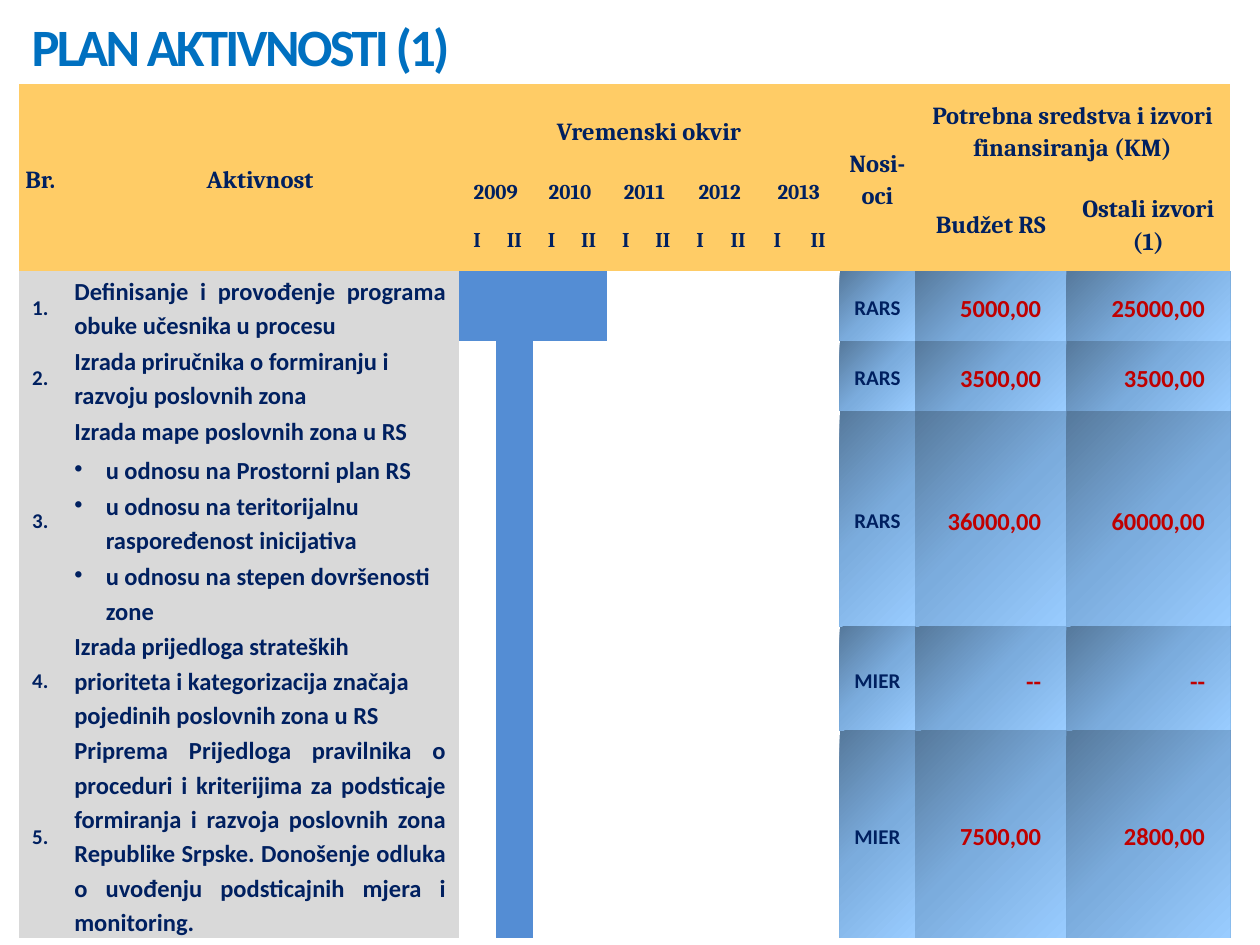
import dataclasses

import lxml.etree
import pptx
import pptx.dml.color
import pptx.enum.text
import pptx.oxml
import pptx.oxml.ns
import pptx.util

ALIGN = pptx.enum.text.PP_ALIGN
ANCHOR = pptx.enum.text.MSO_ANCHOR
NO_GRID = "{2D5ABB26-0587-4C30-8999-92F81FD0307C}"


@dataclasses.dataclass(frozen=True)
class Theme:
    body: str = "Calibri"
    head: str = "Cambria"
    title: str = "0070C0"
    ink: str = "002060"
    money: str = "C00000"
    header: str = "FFCC66"
    label: str = "D9D9D9"
    busy: str = "548DD4"
    idle: str = "FFFFFF"
    gradient: tuple = ((0, "56799C"), (50, "7BACDD"), (100, "99CCFF"))
    title_size: int = 30
    large: int = 14
    small: int = 12


THEME = Theme()


def write(p, text, size=THEME.large, font=THEME.body, color=THEME.ink,
          align=ALIGN.LEFT, leading=1.15, after=0, spacing=None, bullet=False):
    if bullet:
        pPr = p._p.get_or_add_pPr()
        pPr.set("marL", str(pptx.util.Inches(0.25)))
        pPr.set("indent", str(pptx.util.Inches(-0.25)))
        bu = lxml.etree.SubElement(pPr, pptx.oxml.ns.qn("a:buChar"))
        bu.set("char", "•")
        tabs = lxml.etree.SubElement(pPr, pptx.oxml.ns.qn("a:tabLst"))
        tab = lxml.etree.SubElement(tabs, pptx.oxml.ns.qn("a:tab"))
        tab.set("pos", str(pptx.util.Inches(0.5)))
        tab.set("algn", "l")
    p.alignment = align
    p.line_spacing = leading
    p.space_before = pptx.util.Pt(0)
    p.space_after = pptx.util.Pt(after)
    r = p.add_run()
    r.text = text
    r.font.name = font
    r.font.size = pptx.util.Pt(size)
    r.font.bold = True
    r.font.color.rgb = pptx.dml.color.RGBColor.from_string(color)
    if spacing is not None:
        r._r.get_or_add_rPr().set("spc", str(int(spacing * 100)))


class Deck:
    columns, rows = 100, 75

    def __init__(self, theme):
        self.theme = theme
        self.prs = pptx.Presentation()
        self.prs.slide_width = pptx.util.Inches(10)
        self.prs.slide_height = pptx.util.Inches(7.5)
        self.s = self.prs.slides.add_slide(self.prs.slide_layouts[5])

    def x(self, columns):
        return round(self.prs.slide_width * columns / self.columns)

    def y(self, rows):
        return round(self.prs.slide_height * rows / self.rows)

    def title(self, text, left, top, width, height):
        sp = self.s.shapes.title
        sp.left, sp.top = self.x(left), self.y(top)
        sp.width, sp.height = self.x(width), self.y(height)
        tf = sp.text_frame
        tf.margin_left = tf.margin_right = tf.margin_top = tf.margin_bottom = 0
        tf.vertical_anchor = ANCHOR.TOP
        tf.word_wrap = True
        write(tf.paragraphs[0], text, size=self.theme.title_size,
              color=self.theme.title, leading=0.9, spacing=-1.5)

    def table(self, left, top, widths, heights):
        frame = self.s.shapes.add_table(
            len(heights), len(widths), self.x(left), self.y(top),
            self.x(sum(widths)), self.y(sum(heights)))
        self.tbl = frame.table
        self.tbl.first_row = self.tbl.horz_banding = False
        tblPr = self.tbl._tbl.tblPr
        tblPr.find(pptx.oxml.ns.qn("a:tableStyleId")).text = NO_GRID
        for column, width in zip(self.tbl.columns, widths):
            column.width = self.x(width)
        for row, height in zip(self.tbl.rows, heights):
            row.height = self.y(height)
        for cell in self.tbl.iter_cells():
            cell.margin_left = cell.margin_right = self.x(0.4)
            cell.margin_top, cell.margin_bottom = self.y(0.1), 0
            cell.vertical_anchor = ANCHOR.MIDDLE

    def fill(self, cell, color):
        if isinstance(color, str):
            cell.fill.solid()
            cell.fill.fore_color.rgb = pptx.dml.color.RGBColor.from_string(color)
            return
        stops = "".join(f'<a:gs pos="{at * 1000}"><a:srgbClr val="{c}"/></a:gs>'
                        for at, c in color)
        cell._tc.get_or_add_tcPr().append(pptx.oxml.parse_xml(
            f'<a:gradFill {pptx.oxml.ns.nsdecls("a")} rotWithShape="1">'
            f'<a:gsLst>{stops}</a:gsLst><a:lin ang="2700000" scaled="1"/></a:gradFill>'))

    def cell(self, row, column, background, text=None, span=(1, 1), **style):
        cell = self.tbl.cell(row, column)
        if span != (1, 1):
            cell.merge(self.tbl.cell(row + span[0] - 1, column + span[1] - 1))
        self.fill(cell, background)
        if text:
            write(cell.text_frame.paragraphs[0], text, **style)
        return cell

    def header(self, row, column, text, span=(1, 1), size=THEME.large):
        self.cell(row, column, self.theme.header, text, span,
                  size=size, font=self.theme.head, align=ALIGN.CENTER)

    def activity(self, row, number, text, align, points, busy, owner, amounts):
        t = self.theme
        small = dict(size=t.small, align=ALIGN.CENTER)
        self.cell(row, 0, t.label, number, **small)
        cell = self.cell(row, 1, t.label, text, align=align, after=3)
        cell.margin_left = cell.margin_right = self.x(1)
        cell.vertical_anchor = ANCHOR.TOP
        for i, point in enumerate(points, 1):
            write(cell.text_frame.add_paragraph(), point, bullet=True,
                  after=1 if i < len(points) else 0)
        for half in range(10):
            self.cell(row, 2 + half, t.busy if half in busy else t.idle)
        self.cell(row, 12, t.gradient, owner, **small)
        for column, amount in enumerate(amounts, 13):
            cell = self.cell(row, column, t.gradient, amount,
                             color=t.money, align=ALIGN.RIGHT)
            cell.margin_right = self.x(2)


ACTIVITIES = [
    ("1.", "Definisanje i provođenje programa obuke učesnika u procesu",
     ALIGN.JUSTIFY, [], range(4), "RARS", ("5000,00", "25000,00")),
    ("2.", "Izrada priručnika o formiranju i razvoju poslovnih zona",
     ALIGN.LEFT, [], [1], "RARS", ("3500,00", "3500,00")),
    ("3.", "Izrada mape poslovnih zona u RS", ALIGN.JUSTIFY,
     ["u odnosu na Prostorni plan RS",
      "u odnosu na teritorijalnu raspoređenost inicijativa",
      "u odnosu na stepen dovršenosti zone"],
     [1], "RARS", ("36000,00", "60000,00")),
    ("4.", "Izrada prijedloga strateških prioriteta i kategorizacija značaja "
     "pojedinih poslovnih zona u RS",
     ALIGN.LEFT, [], [1], "MIER", ("--", "--")),
    ("5.", "Priprema Prijedloga pravilnika o proceduri i kriterijima za podsticaje "
     "formiranja i razvoja poslovnih zona Republike Srpske. Donošenje odluka o "
     "uvođenju podsticajnih mjera i monitoring.",
     ALIGN.JUSTIFY, [], [1], "MIER", ("7500,00", "2800,00")),
]


def main():
    deck = Deck(THEME)
    deck.title("PLAN AKTIVNOSTI (1)", 2.5, 1.7, 41.7, 4.5)
    deck.table(1.5, 6.7,
               [3.4, 31.5] + [2.95] * 7 + [3.1, 3.1, 3.4, 6, 12, 13],
               [7.2, 2.4, 2.4, 4.8, 4.8, 14.9, 7.2, 14.4])
    deck.header(0, 0, "Br.", (3, 1))
    deck.header(0, 1, "Aktivnost", (3, 1))
    deck.header(0, 2, "Vremenski okvir", (1, 10))
    deck.header(0, 12, "Nosi-oci", (3, 1))
    deck.header(0, 13, "Potrebna sredstva i izvori finansiranja (KM)", (1, 2))
    for i in range(5):
        column = 2 + 2 * i
        deck.header(1, column, str(2009 + i), (1, 2), THEME.small)
        deck.header(2, column, "I", size=THEME.small)
        deck.header(2, column + 1, "II", size=THEME.small)
    deck.header(1, 13, "Budžet RS", (2, 1))
    deck.header(1, 14, "Ostali izvori (1)", (2, 1))
    for row, activity in enumerate(ACTIVITIES, 3):
        deck.activity(row, *activity)
    deck.prs.save("out.pptx")


if __name__ == "__main__":
    main()
